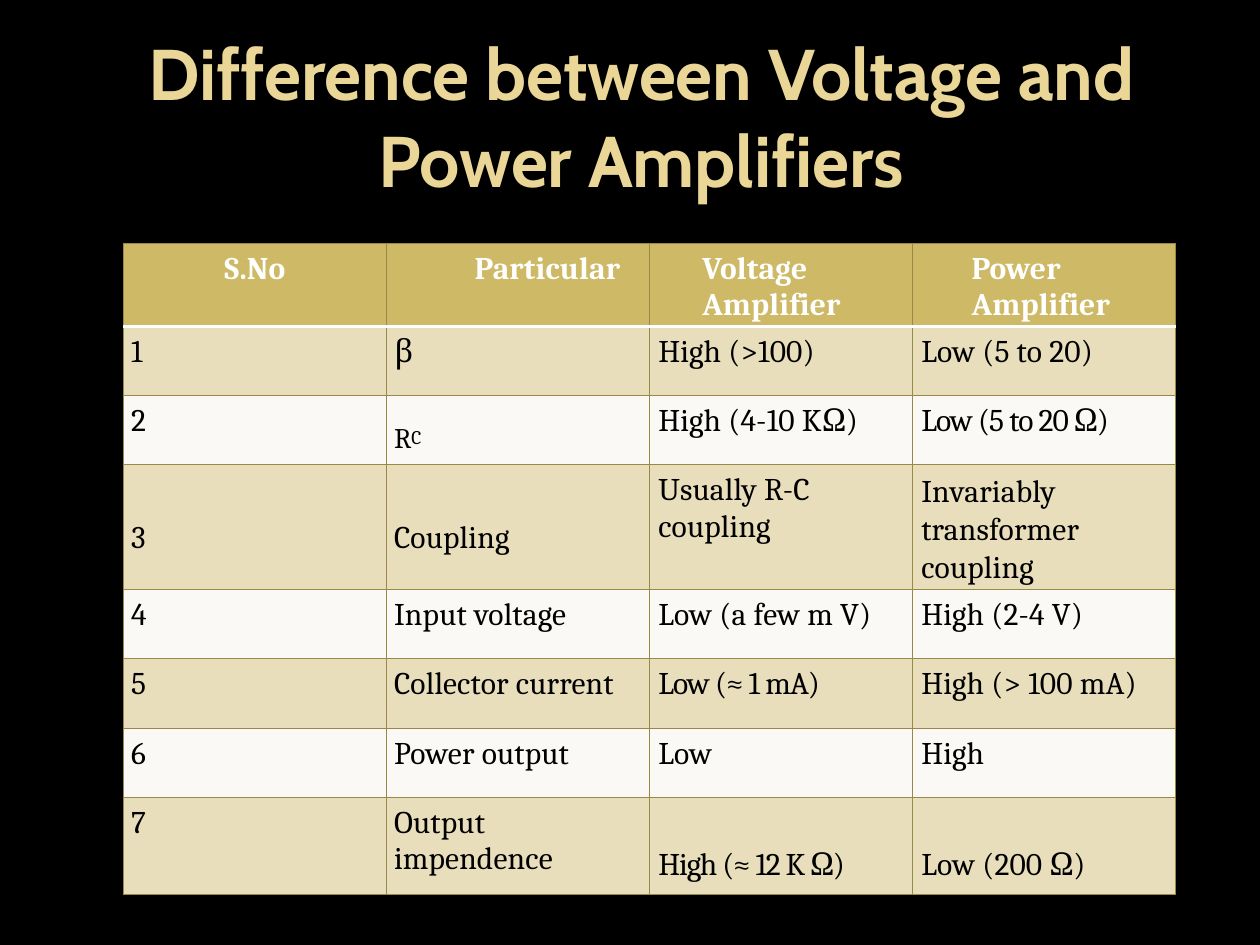
from dataclasses import dataclass

from lxml.etree import SubElement
from pptx import Presentation
from pptx.dml.color import RGBColor
from pptx.enum.text import MSO_ANCHOR, MSO_AUTO_SIZE, PP_ALIGN
from pptx.oxml.ns import qn
from pptx.util import Inches, Pt


@dataclass(frozen=True)
class Theme:
    background: str = "000000"
    title: str = "EAD696"
    header: str = "CEB966"
    header_text: str = "FFFFFF"
    body_text: str = "000000"
    band: str = "E8DEBC"
    plain: str = "FAF9F5"
    border: str = "998946"
    title_font: str = "Cabin"
    table_font: str = "Cambria"
    title_size: float = 41
    table_size: float = 18
    symbol_size: float = 28
    subscript_size: float = 11


THEME = Theme()

HEADERS = ["S.No", "Particular", "Voltage Amplifier", "Power Amplifier"]
HEADER_INDENTS = [0, 0.7, 0.42, 0.47]
ROWS = [
    ["1", "β", "High (>100)", "Low (5 to 20)"],
    ["2", "RC", "High (4-10 KΩ)", "Low (5 to 20 Ω)"],
    ["3", "Coupling", "Usually R-C coupling", "Invariably transformer coupling"],
    ["4", "Input voltage", "Low (a few m V)", "High (2-4 V)"],
    ["5", "Collector current", "Low (≈ 1 mA)", "High (> 100 mA)"],
    ["6", "Power output", "Low", "High"],
    ["7", "Output impendence", "High (≈ 12 K Ω)", "Low (200 Ω)"],
]
ROW_HEIGHTS = [0.66, 0.55, 0.55, 0.99, 0.55, 0.55, 0.55, 0.77]
BODY_INDENTS = [0.06, 0.06, 0.07, 0.07]
TOP = 0.06
# Cells set lower than the rest of their row, and cells with tighter letters
TOPS = {(2, 1): 0.04, (3, 0): 0.44, (3, 1): 0.44, (7, 2): 0.39, (7, 3): 0.39}
SPACINGS = {(2, 3): -0.5, (5, 2): -0.5, (7, 2): -0.6}


def add_text(p, text, *, font, size, color, bold=False, spacing=0, baseline=0):
    r = p.add_run()
    r.text = text
    r.font.name = font
    r.font.size = Pt(size)
    r.font.bold = bold
    r.font.color.rgb = RGBColor.from_string(color)
    rPr = r.font._element
    if spacing:
        rPr.set("spc", str(round(spacing * 100)))
    if baseline:
        rPr.set("baseline", str(baseline * 1000))


def set_border(cell, side, color, width):
    ln = SubElement(cell._tc.get_or_add_tcPr(), qn(f"a:ln{side}"), w=str(Pt(width)))
    fill = SubElement(ln, qn("a:solidFill"))
    SubElement(fill, qn("a:srgbClr"), val=color)


def format_cell(cell, row, indent, top):
    """Set the margins, borders and fill; borders must precede the fill."""
    cell.margin_left, cell.margin_top = Inches(indent), Inches(top)
    cell.margin_right = cell.margin_bottom = 0
    cell.vertical_anchor = MSO_ANCHOR.TOP
    header_edge = {0: "B", 1: "T"}.get(row)
    for side in "LRTB":
        if side == header_edge:
            set_border(cell, side, THEME.header_text, 2)
        else:
            set_border(cell, side, THEME.border, 0.75)
    color = THEME.header if row == 0 else THEME.band if row % 2 else THEME.plain
    cell.fill.solid()
    cell.fill.fore_color.rgb = RGBColor.from_string(color)


def add_title(s, text, left, top, width, height):
    sp = s.shapes.title
    sp.left, sp.top, sp.width, sp.height = map(Inches, (left, top, width, height))
    tf = sp.text_frame
    tf.word_wrap = True
    tf.auto_size = MSO_AUTO_SIZE.NONE
    tf.vertical_anchor = MSO_ANCHOR.MIDDLE
    tf.margin_left = tf.margin_right = tf.margin_top = tf.margin_bottom = 0
    p = tf.paragraphs[0]
    p.alignment = PP_ALIGN.CENTER
    p.line_spacing = 1.01
    add_text(p, text, font=THEME.title_font, size=THEME.title_size,
             color=THEME.title, bold=True, spacing=-0.1)


def add_comparison_table(s, left, top, width):
    tbl = s.shapes.add_table(len(ROW_HEIGHTS), len(HEADERS), Inches(left), Inches(top),
                             Inches(width), Inches(sum(ROW_HEIGHTS))).table
    tbl.horz_banding = False
    for row, height in zip(tbl.rows, ROW_HEIGHTS):
        row.height = Inches(height)
    for i, texts in enumerate([HEADERS] + ROWS):
        header = i == 0
        indents = HEADER_INDENTS if header else BODY_INDENTS
        for j, text in enumerate(texts):
            cell = tbl.cell(i, j)
            format_cell(cell, i, indents[j], TOPS.get((i, j), TOP))
            p = cell.text_frame.paragraphs[0]
            p.alignment = PP_ALIGN.CENTER if header and j == 0 else PP_ALIGN.LEFT
            style = dict(font=THEME.table_font,
                         color=THEME.header_text if header else THEME.body_text)
            if text == "RC":
                add_text(p, "R", size=THEME.symbol_size, baseline=-7, **style)
                add_text(p, "C", size=THEME.subscript_size, **style)
            else:
                add_text(p, text, size=THEME.table_size, bold=header,
                         spacing=SPACINGS.get((i, j), 0.1), **style)
    tbl.cell(3, 3).text_frame.paragraphs[0].line_spacing = 1.05


def main():
    prs = Presentation()
    prs.slide_width, prs.slide_height = Inches(10), Inches(7.5)
    s = prs.slides.add_slide(prs.slide_layouts[5])
    s.background.fill.solid()
    s.background.fill.fore_color.rgb = RGBColor.from_string(THEME.background)
    add_title(s, "Difference between Voltage and Power Amplifiers", 0.59, 0.21, 9, 1.4)
    add_comparison_table(s, 0.98, 1.93, 8.35)
    prs.save("out.pptx")


if __name__ == "__main__":
    main()
